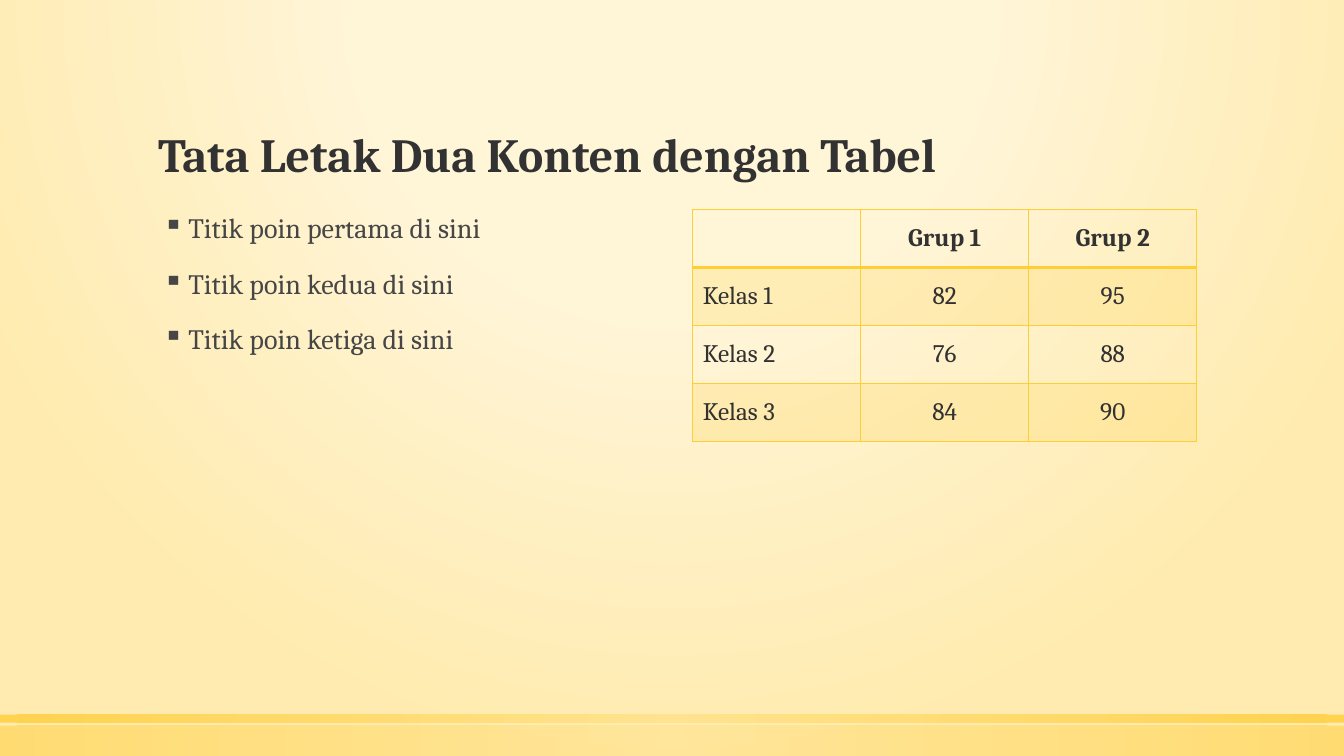
import pptx
import pptx.dml.color
import pptx.enum.shapes
import pptx.enum.text
import pptx.oxml
import pptx.oxml.ns
import pptx.util
from dataclasses import dataclass

# Content
TITLE = "Tata Letak Dua Konten dengan Tabel"
POINTS = ["Titik poin pertama di sini", "Titik poin kedua di sini", "Titik poin ketiga di sini"]
SCORES = [
    ("", "Grup 1", "Grup 2"),
    ("Kelas 1", "82", "95"),
    ("Kelas 2", "76", "88"),
    ("Kelas 3", "84", "90"),
]


@dataclass(frozen=True)
class Theme:
    font: str = "Cambria"
    dark: str = "323232"
    body: str = "464646"
    gold: str = "FFCD36"
    light_gold: str = "FFE186"
    cream: str = "FFF5D7"
    sand: str = "FFEBAF"
    title_size: int = 34
    body_size: int = 20
    table_size: int = 18


THEME = Theme()

# Layout in inches
WIDTH, HEIGHT = 13.33, 7.5
MARGIN, GUTTER = 1.47, 0.4
COLUMN = 5
TITLE_TOP, TITLE_HEIGHT = 0.51, 1.35
BODY_TOP, BODY_HEIGHT = 2.08, 4.51
TABLE_HEIGHT = 2.3
BARS = [(7.2, 0.3, 50), (7.09, 0.08, 80)]  # top, height, opacity

ANCHOR = pptx.enum.text.MSO_ANCHOR
ALIGN = pptx.enum.text.PP_ALIGN
NAMESPACE = pptx.oxml.ns.nsdecls("a")


def inches(*lengths):
    return [pptx.util.Inches(length) for length in lengths]


def set_gradient(fill, parent, stops, top, bottom):
    """Swap a solid fill for a circular gradient."""
    fill.solid()
    marks = "".join(
        f'<a:gs pos="{place * 1000}"><a:srgbClr val="{color}">'
        f'<a:alpha val="{opacity * 1000}"/></a:srgbClr></a:gs>'
        for place, color, opacity in stops
    )
    gradient = pptx.oxml.parse_xml(
        f'<a:gradFill {NAMESPACE} rotWithShape="1"><a:gsLst>{marks}</a:gsLst>'
        f'<a:path path="circle"><a:fillToRect l="50000" t="{top * 1000}" '
        f'r="50000" b="{bottom * 1000}"/></a:path></a:gradFill>'
    )
    solid = parent.find(pptx.oxml.ns.qn("a:solidFill"))
    parent.replace(solid, gradient)


def style_font(para, size, color, bold=False):
    para.font.name = THEME.font
    para.font.size = pptx.util.Pt(size)
    para.font.bold = bold
    para.font.color.rgb = pptx.dml.color.RGBColor.from_string(color)


def add_text(page, frame, lines, size, color, bold=False, anchor=ANCHOR.TOP):
    box = page.shapes.add_textbox(*inches(*frame))
    text = box.text_frame
    text.word_wrap = True
    text.vertical_anchor = anchor
    text.text = "\n".join(lines)
    for para in text.paragraphs:
        para.line_spacing = 0.9
        style_font(para, size, color, bold)
    return text


def add_bullet(para):
    para.space_before = pptx.util.Pt(18)
    properties = para._p.get_or_add_pPr()
    left, hanging = inches(0.3, -0.25)
    properties.set("marL", str(left))
    properties.set("indent", str(hanging))
    properties.append(pptx.oxml.parse_xml(f'<a:buChar {NAMESPACE} char="▪"/>'))


def set_borders(cell, widths):
    properties = cell._tc.get_or_add_tcPr()
    for index, (side, width) in enumerate(zip("LRTB", widths)):
        properties.insert(index, pptx.oxml.parse_xml(
            f'<a:ln{side} {NAMESPACE} w="{pptx.util.Pt(width)}"><a:solidFill>'
            f'<a:srgbClr val="{THEME.gold}"/></a:solidFill></a:ln{side}>'
        ))


def style_cell(cell, row, column):
    cell.vertical_anchor = ANCHOR.MIDDLE
    para = cell.text_frame.paragraphs[0]
    para.alignment = ALIGN.CENTER if column else ALIGN.LEFT
    style_font(para, THEME.table_size, THEME.dark, bold=row == 0)
    if row % 2:
        cell.fill.solid()
        cell.fill.fore_color.rgb = pptx.dml.color.RGBColor.from_string(THEME.gold)
        tint = cell._tc.tcPr.find(".//" + pptx.oxml.ns.qn("a:srgbClr"))
        tint.append(pptx.oxml.parse_xml(f'<a:alpha {NAMESPACE} val="20000"/>'))
    else:
        cell.fill.background()
    set_borders(cell, (1, 1, 2 if row == 1 else 1, 2 if row == 0 else 1))


def add_scores(page, frame):
    table = page.shapes.add_table(len(SCORES), len(SCORES[0]), *inches(*frame)).table
    table.first_row = table.horz_banding = False
    for row, values in enumerate(SCORES):
        for column, value in enumerate(values):
            cell = table.cell(row, column)
            cell.text = value
            style_cell(cell, row, column)


def main():
    deck = pptx.Presentation()
    deck.slide_width, deck.slide_height = inches(WIDTH, HEIGHT)
    page = deck.slides.add_slide(deck.slide_layouts[6])

    # Background and bottom bars
    fill = page.background.fill
    backdrop = page._element.find(".//" + pptx.oxml.ns.qn("p:bgPr"))
    glow = [(0, THEME.cream, 59), (40, THEME.cream, 66), (100, THEME.sand, 100)]
    set_gradient(fill, backdrop, glow, -80, 180)
    for top, height, opacity in BARS:
        bar = page.shapes.add_shape(
            pptx.enum.shapes.MSO_SHAPE.RECTANGLE, *inches(0, top, WIDTH, height))
        bar.shadow.inherit = False
        bar.line.fill.background()
        stops = [(0, THEME.light_gold, opacity), (100, THEME.gold, opacity)]
        set_gradient(bar.fill, bar._element.spPr, stops, 50, 50)

    # Title, points and table
    add_text(page, (MARGIN, TITLE_TOP, 2 * COLUMN + GUTTER, TITLE_HEIGHT), [TITLE],
             THEME.title_size, THEME.dark, bold=True, anchor=ANCHOR.BOTTOM)
    points = add_text(page, (MARGIN, BODY_TOP, COLUMN, BODY_HEIGHT), POINTS,
                      THEME.body_size, THEME.body)
    for para in points.paragraphs:
        add_bullet(para)
    add_scores(page, (MARGIN + COLUMN + GUTTER, BODY_TOP, COLUMN, TABLE_HEIGHT))

    deck.save("out.pptx")


if __name__ == "__main__":
    main()
